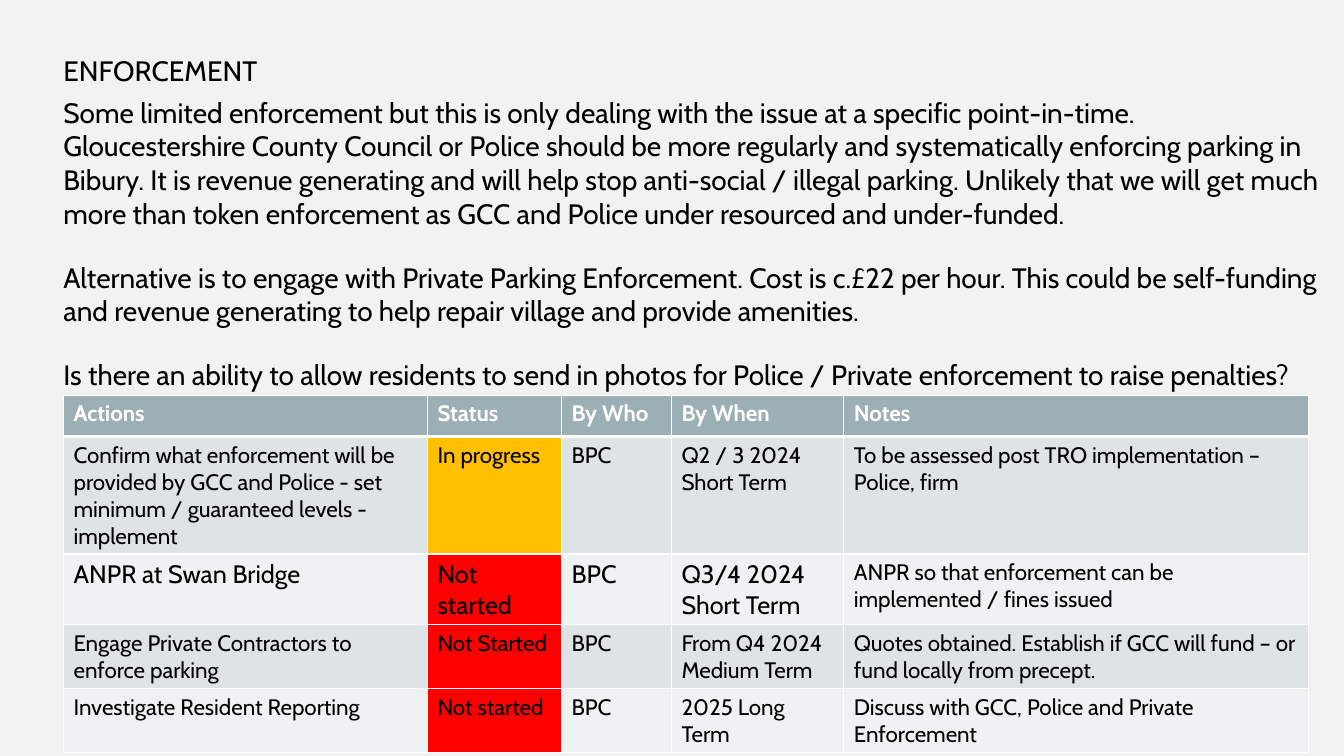
from dataclasses import dataclass

from lxml import etree
from pptx import Presentation
from pptx.dml.color import RGBColor
from pptx.enum.text import MSO_AUTO_SIZE
from pptx.oxml.ns import qn
from pptx.util import Inches, Pt

FIT_SHAPE = MSO_AUTO_SIZE.SHAPE_TO_FIT_TEXT
FONT = "Cabin"
BLACK, WHITE = "000000", "FFFFFF"
HEADER_FILL, AMBER, RED = "9BAFB5", "FFC000", "FF0000"
BAND_FILLS = ("DEE3E5", "EFF2F3")
HEADINGS = ("Actions", "Status", "By Who", "By When", "Notes")
COLUMN_WIDTHS = (3.61, 1.33, 1.09, 1.71, 4.61)
HEADER_HEIGHT = 0.41


@dataclass(frozen=True)
class Statement:
    text: str
    space_after: float = 6


@dataclass(frozen=True)
class Action:
    cells: tuple[str, ...]
    status_fill: str
    height: float
    sizes: tuple[int, ...] = (16,) * 5


STATEMENTS = (
    Statement("ENFORCEMENT"),
    Statement(
        "Some limited enforcement but this is only dealing with the issue at a specific "
        "point-in-time. Gloucestershire County Council or Police should be more regularly "
        "and systematically enforcing parking in Bibury. It is revenue generating and will "
        "help stop anti-social / illegal parking. Unlikely that we will get much more than "
        "token enforcement as GCC and Police under resourced and under-funded.", 21.7),
    Statement(
        "Alternative is to engage with Private Parking Enforcement. Cost is c.£22 per hour. "
        "This could be self-funding and revenue generating to help repair village and "
        "provide amenities.", 21.7),
    Statement(
        "Is there an ability to allow residents to send in photos for Police / Private "
        "enforcement to raise penalties?"),
)

ACTIONS = (
    Action(("Confirm what enforcement will be provided by GCC and Police - set minimum / "
            "guaranteed levels - implement", "In progress", "BPC", "Q2 / 3 2024 Short Term",
            "To be assessed post TRO implementation – Police, firm"), AMBER, 1.16),
    Action(("ANPR at Swan Bridge", "Not started", "BPC", "Q3/4 2024 Short Term",
            "ANPR so that enforcement can be implemented / fines issued"),
           RED, 0.7, (18, 18, 18, 18, 16)),
    Action(("Engage Private Contractors to enforce parking", "Not Started", "BPC",
            "From Q4 2024 Medium Term",
            "Quotes obtained. Establish if GCC will fund – or fund locally from precept."),
           RED, 0.63),
    Action(("Investigate Resident Reporting", "Not started", "BPC", "2025 Long Term",
            "Discuss with GCC, Police and Private Enforcement"), RED, 0.63),
)


def color(value: str) -> RGBColor:
    return RGBColor.from_string(value)


def add_span(para, text: str, size: int, ink: str, bold: bool = False) -> None:
    span = para.add_run()
    span.text = text
    span.font.name = FONT
    span.font.size = Pt(size)
    span.font.bold = bold
    span.font.color.rgb = color(ink)


def add_borders(cell, top: int, bottom: int) -> None:
    properties = cell._tc.get_or_add_tcPr()
    for side, width in (("L", 1), ("R", 1), ("T", top), ("B", bottom)):
        line = etree.SubElement(properties, qn(f"a:ln{side}"), w=str(Pt(width)))
        fill = etree.SubElement(line, qn("a:solidFill"))
        etree.SubElement(fill, qn("a:srgbClr"), val=WHITE)


def fill_cell(cell, text: str, fill: str, size: int = 16, ink: str = BLACK,
              bold: bool = False, top: int = 1, bottom: int = 1) -> None:
    add_borders(cell, top, bottom)
    cell.fill.solid()
    cell.fill.fore_color.rgb = color(fill)
    add_span(cell.text_frame.paragraphs[0], text, size, ink, bold)


def add_statements(page) -> None:
    box = page.shapes.add_textbox(Inches(0.53), Inches(0.48), Inches(12.69), Inches(3.48))
    frame = box.text_frame
    frame.word_wrap = True
    frame.auto_size = FIT_SHAPE
    for index, statement in enumerate(STATEMENTS):
        para = frame.add_paragraph() if index else frame.paragraphs[0]
        para.space_after = Pt(statement.space_after)
        add_span(para, statement.text, 20, BLACK)


def add_action_table(page) -> None:
    heights = [HEADER_HEIGHT] + [action.height for action in ACTIONS]
    table = page.shapes.add_table(
        len(heights), len(HEADINGS), Inches(0.63), Inches(3.92),
        Inches(sum(COLUMN_WIDTHS)), Inches(sum(heights))).table
    table.horz_banding = False
    for column, width in zip(table.columns, COLUMN_WIDTHS):
        column.width = Inches(width)
    for row, height in zip(table.rows, heights):
        row.height = Inches(height)
    for column, heading in enumerate(HEADINGS):
        fill_cell(table.cell(0, column), heading, HEADER_FILL, ink=WHITE, bold=True, bottom=3)
    status_column = HEADINGS.index("Status")
    for row, action in enumerate(ACTIONS, start=1):
        band = BAND_FILLS[(row - 1) % len(BAND_FILLS)]
        for column, (text, size) in enumerate(zip(action.cells, action.sizes)):
            fill = action.status_fill if column == status_column else band
            fill_cell(table.cell(row, column), text, fill, size, top=3 if row == 1 else 1)


def main() -> None:
    deck = Presentation()
    deck.slide_width, deck.slide_height = Inches(13.33), Inches(7.5)
    page = deck.slides.add_slide(deck.slide_layouts[6])
    page.background.fill.solid()
    page.background.fill.fore_color.rgb = color("F2F2F2")
    add_statements(page)
    add_action_table(page)
    deck.save("out.pptx")


if __name__ == "__main__":
    main()
